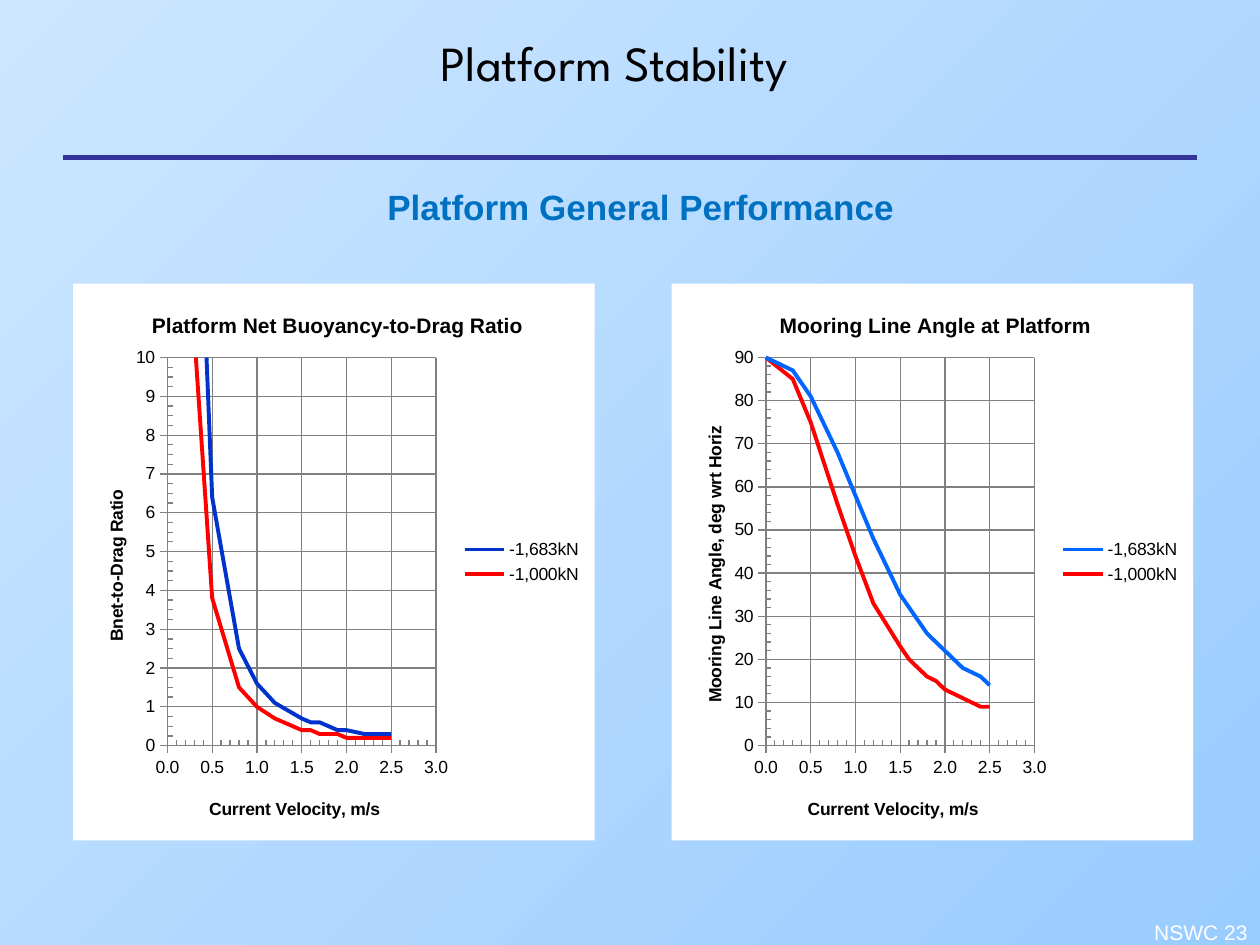
from lxml.etree import SubElement
from pptx import Presentation
from pptx.chart.data import XyChartData
from pptx.dml.color import RGBColor
from pptx.enum.chart import XL_CHART_TYPE as ChartType, XL_LEGEND_POSITION as LegendSide
from pptx.enum.chart import XL_TICK_MARK as Tick
from pptx.enum.shapes import MSO_CONNECTOR as Connector
from pptx.enum.text import MSO_ANCHOR as Anchor, PP_ALIGN as Align
from pptx.oxml import parse_xml
from pptx.oxml.ns import qn
from pptx.util import Inches, Pt

WIDTH, HEIGHT = 10, 7.5
COLORS = {"sky": "CDE6FF", "sky_deep": "99CCFF", "rule": "333399", "heading": "0070C0",
          "black": "000000", "white": "FFFFFF", "grid": "808080",
          "navy": "0033CC", "blue": "0066FF", "red": "FF0000"}
VELOCITY = [0, 0.3, 0.5, 0.8, 1, 1.2, 1.5, 1.6, 1.7, 1.8, 1.9, 2, 2.2, 2.4, 2.5]
CHARTS = [
    {"left": 0.58, "title": "Platform Net Buoyancy-to-Drag Ratio", "title_at": (0.144, 0.045),
     "axis": "Bnet-to-Drag Ratio", "axis_at": (0.055, 0.365),
     "scale": {"maximum_scale": 10, "major_unit": 1}, "minor": 0.25,
     "series": [
         ("-1,683kN", "navy", [1000, 17.8, 6.4, 2.5, 1.6, 1.1, 0.7, 0.6, 0.6, 0.5,
                               0.4, 0.4, 0.3, 0.3, 0.3]),
         ("-1,000kN", "red", [1000, 10.6, 3.8, 1.5, 1, 0.7, 0.4, 0.4, 0.3, 0.3,
                              0.3, 0.2, 0.2, 0.2, 0.2])]},
    {"left": 5.33, "title": "Mooring Line Angle at Platform", "title_at": (0.2, 0.045),
     "axis": "Mooring Line Angle, deg wrt Horiz", "axis_at": (0.055, 0.25),
     "scale": {"maximum_scale": 90, "major_unit": 10}, "minor": 2,
     "series": [
         ("-1,683kN", "blue", [90, 87, 81, 68, 58, 48, 35, 32, 29, 26, 24, 22, 18, 16, 14]),
         ("-1,000kN", "red", [90, 85, 75, 56, 44, 33, 23, 20, 18, 16, 15, 13, 11, 9, 9])]},
]


def color(name):
    """Return the named colour."""
    return RGBColor.from_string(COLORS[name])


def apply(target, **values):
    """Set several attributes on one object."""
    for name, value in values.items():
        setattr(target, name, value)


def style_font(font, tint, **values):
    """Set a font's colour and format."""
    font.fill.solid()
    font.fill.fore_color.rgb = color(tint)
    apply(font, **values)


def paint_background(page):
    """Fill the page with a diagonal gradient."""
    fill = page.background.fill
    fill.gradient()
    fill.gradient_angle = 315
    for stop, tint in zip(fill.gradient_stops, ("sky", "sky_deep")):
        stop.color.rgb = color(tint)


def add_rule(page):
    """Draw the rule under the title."""
    left, right, top = (Inches(n) for n in (WIDTH * 0.05, WIDTH * 0.95, HEIGHT / 6))
    rule = page.shapes.add_connector(Connector.STRAIGHT, left, top, right, top)
    rule.line.color.rgb = color("rule")
    rule.line.width = Pt(3)
    SubElement(rule._element.spPr, qn("a:effectLst"))


def add_text(page, text, area, align, tint, anchor=Anchor.TOP, **font):
    """Add one line of text in a box."""
    box = page.shapes.add_textbox(*(Inches(n) for n in area))
    apply(box.text_frame, word_wrap=True, vertical_anchor=anchor)
    para = box.text_frame.paragraphs[0]
    para.alignment = align
    span = para.add_run()
    span.text = text
    style_font(span.font, tint, **font)


def place(parent, index, x, y, w=None, h=None):
    """Give a chart part a manual layout in shares of the chart."""
    for old in parent.findall(qn("c:layout")):
        parent.remove(old)
    layout = parse_xml('<c:layout xmlns:c="http://schemas.openxmlformats.org/drawingml/'
                       '2006/chart"><c:manualLayout/></c:layout>')
    values = {"xMode": "edge", "yMode": "edge", "x": x, "y": y}
    if w:
        values = {"layoutTarget": "inner", **values, "w": w, "h": h}
    for name, value in values.items():
        SubElement(layout[0], qn("c:" + name)).set("val", str(value))
    parent.insert(index, layout)


def set_title(owner, title, text, size, spot):
    """Write and place the bold title of a chart or axis."""
    owner.has_title = True
    para = title.text_frame.paragraphs[0]
    span = para.add_run()
    span.text = text
    style_font(span.font, "black", name="Arial", size=Pt(size), bold=True)
    place(title._element, 1, *spot)


def style_axis(axis, text, spot, number_format, minor, scale):
    """Set an axis's title, scale, ticks and grid."""
    apply(axis, minimum_scale=0, has_major_gridlines=True, has_minor_gridlines=False,
          major_tick_mark=Tick.OUTSIDE, minor_tick_mark=Tick.INSIDE, **scale)
    apply(axis.tick_labels, number_format=number_format, number_format_is_linked=False)
    for line in (axis.format.line, axis.major_gridlines.format.line):
        line.color.rgb = color("grid")
        line.width = Pt(0.75)
    step = SubElement(axis._element, qn("c:minorUnit"))
    step.set("val", str(minor))
    axis._element.find(qn("c:majorUnit")).addnext(step)
    set_title(axis, axis.axis_title, text, 10, spot)


def add_curves(page, plan):
    """Add one smooth scatter chart on a white panel."""
    data = XyChartData()
    for name, _, values in plan["series"]:
        series = data.add_series(name)
        for point in zip(VELOCITY, values):
            series.add_data_point(*point)
    area = (Inches(n) for n in (plan["left"], HEIGHT * 0.3, 4.14, 4.42))
    chart = page.shapes.add_chart(ChartType.XY_SCATTER_SMOOTH_NO_MARKERS, *area, data).chart
    style_font(chart.font, "black", name="Arial", size=Pt(10))
    panel = parse_xml('<c:spPr xmlns:c="http://schemas.openxmlformats.org/drawingml/2006/chart" '
                      'xmlns:a="http://schemas.openxmlformats.org/drawingml/2006/main">'
                      f'<a:solidFill><a:srgbClr val="{COLORS["white"]}"/></a:solidFill>'
                      '<a:ln><a:noFill/></a:ln></c:spPr>')
    chart._chartSpace.chart.addnext(panel)
    set_title(chart, chart.chart_title, plan["title"], 12, plan["title_at"])
    style_axis(chart.category_axis, "Current Velocity, m/s", (0.255, 0.917), "0.0", 0.1,
               {"maximum_scale": 3, "major_unit": 0.5})
    style_axis(chart.value_axis, plan["axis"], plan["axis_at"], "0", plan["minor"], plan["scale"])
    place(chart._chartSpace.chart.plotArea, 0, 0.181, 0.133, 0.515, 0.697)
    chart.has_legend = True
    apply(chart.legend, position=LegendSide.RIGHT, include_in_layout=False)
    chart.plots[0].vary_by_categories = False
    for series, (_, tint, _) in zip(chart.plots[0].series, plan["series"]):
        series.smooth = True
        series.format.line.color.rgb = color(tint)
        series.format.line.width = Pt(2.25)


def main():
    """Build and save the slide."""
    deck = Presentation()
    apply(deck, slide_width=Inches(WIDTH), slide_height=Inches(HEIGHT))
    page = deck.slides.add_slide(deck.slide_layouts[6])
    paint_background(page)
    add_rule(page)
    add_text(page, "Platform Stability", (0.25, 0.08, 9.25, 0.83), Align.CENTER, "black",
             Anchor.MIDDLE, name="League Spartan", size=Pt(28))
    add_text(page, "Platform General Performance", (1.5, 1.42, 7.17, 0.44), Align.CENTER,
             "heading", name="Arial", size=Pt(20), bold=True)
    add_text(page, "NSWC 23", (7.67, 7.25, 2.33, 0.42), Align.RIGHT, "white",
             name="Arial", size=Pt(12))
    for plan in CHARTS:
        add_curves(page, plan)
    deck.save("out.pptx")


if __name__ == "__main__":
    main()
